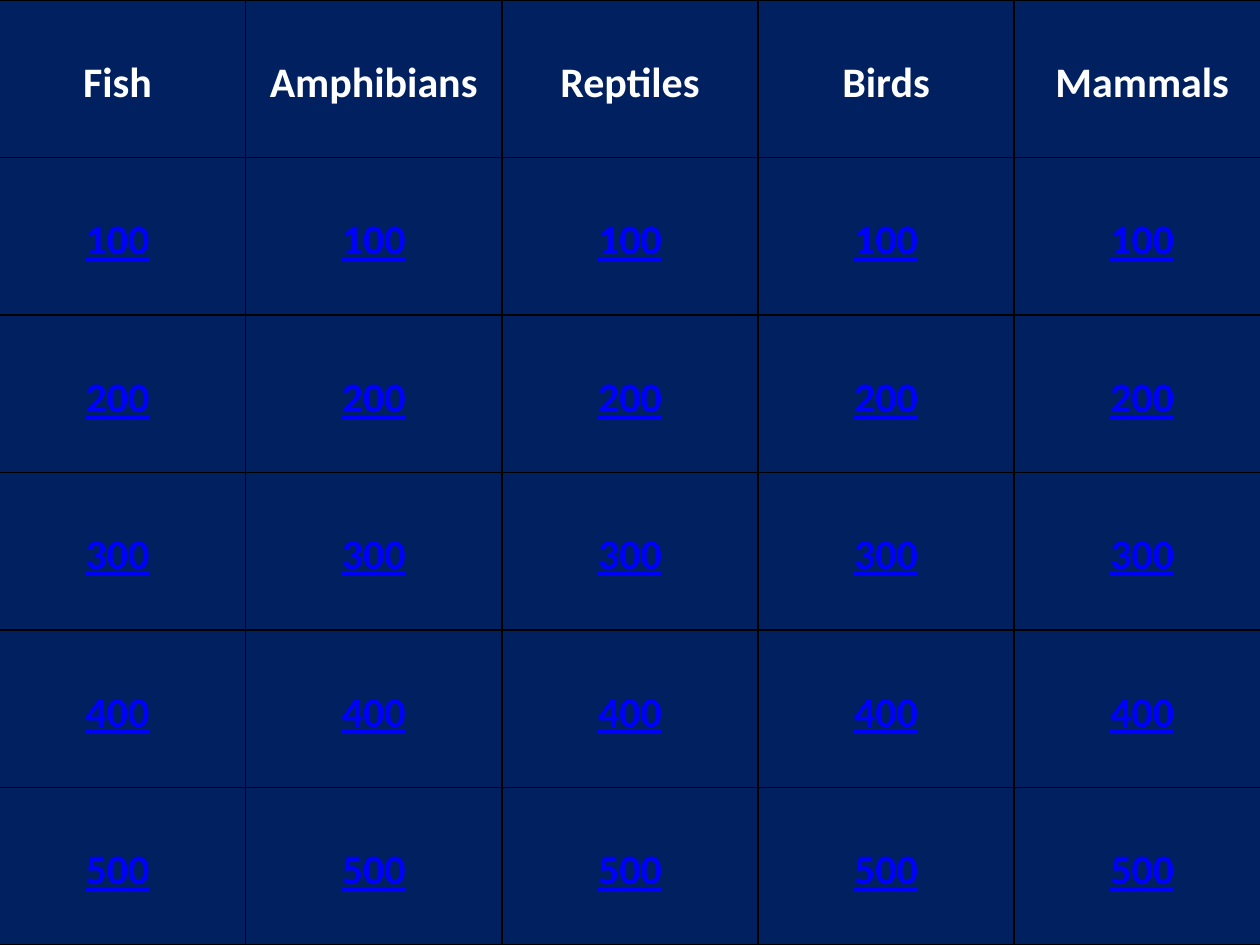
from lxml import etree
from pptx import Presentation
from pptx.dml.color import RGBColor
from pptx.enum.text import MSO_ANCHOR, PP_ALIGN
from pptx.oxml.ns import qn
from pptx.util import Pt

CENTER = PP_ALIGN.CENTER
TOP = MSO_ANCHOR.TOP

CATEGORIES = ["Fish", "Amphibians", "Reptiles", "Birds", "Mammals"]
POINT_VALUES = [100, 200, 300, 400, 500]

COLORS = {"navy": "002060", "white": "FFFFFF", "link": "0000FF", "grid": "000000"}
FONT = "Calibri"
BLANK_LAYOUT = 6

BOARD_LEFT = -6
COLUMN_WIDTH = 146.4
ROW_HEIGHT = 90
TEXT_TOP = 32.9


def color(name):
    return RGBColor.from_string(COLORS[name])


def add_borders(cell):
    properties = cell._tc.get_or_add_tcPr()
    for side in ("lnL", "lnR", "lnT", "lnB"):
        line = etree.SubElement(properties, qn(f"a:{side}"), w=str(Pt(1)))
        fill = etree.SubElement(line, qn("a:solidFill"))
        etree.SubElement(fill, qn("a:srgbClr"), val=COLORS["grid"])


def fill_cell(cell, text, is_heading):
    add_borders(cell)
    cell.fill.solid()
    cell.fill.fore_color.rgb = color("navy")
    cell.vertical_anchor = TOP
    cell.margin_top = Pt(TEXT_TOP)
    para = cell.text_frame.paragraphs[0]
    para.text = text
    para.alignment = CENTER
    para.font.name = FONT
    para.font.size = Pt(24)
    para.font.bold = True
    para.font.underline = not is_heading
    para.font.color.rgb = color("white" if is_heading else "link")


def main():
    deck = Presentation()
    deck.slide_width, deck.slide_height = Pt(720), Pt(540)
    page = deck.slides.add_slide(deck.slide_layouts[BLANK_LAYOUT])
    page.background.fill.solid()
    page.background.fill.fore_color.rgb = color("navy")

    rows = [CATEGORIES] + [[str(value)] * len(CATEGORIES) for value in POINT_VALUES]
    board = page.shapes.add_table(
        len(rows), len(CATEGORIES), Pt(BOARD_LEFT), Pt(0),
        Pt(COLUMN_WIDTH * len(CATEGORIES)), Pt(ROW_HEIGHT * len(rows)),
    ).table
    for column in board.columns:
        column.width = Pt(COLUMN_WIDTH)
    for row_index, texts in enumerate(rows):
        board.rows[row_index].height = Pt(ROW_HEIGHT)
        for column_index, text in enumerate(texts):
            fill_cell(board.cell(row_index, column_index), text, row_index == 0)

    deck.save("out.pptx")


if __name__ == "__main__":
    main()
